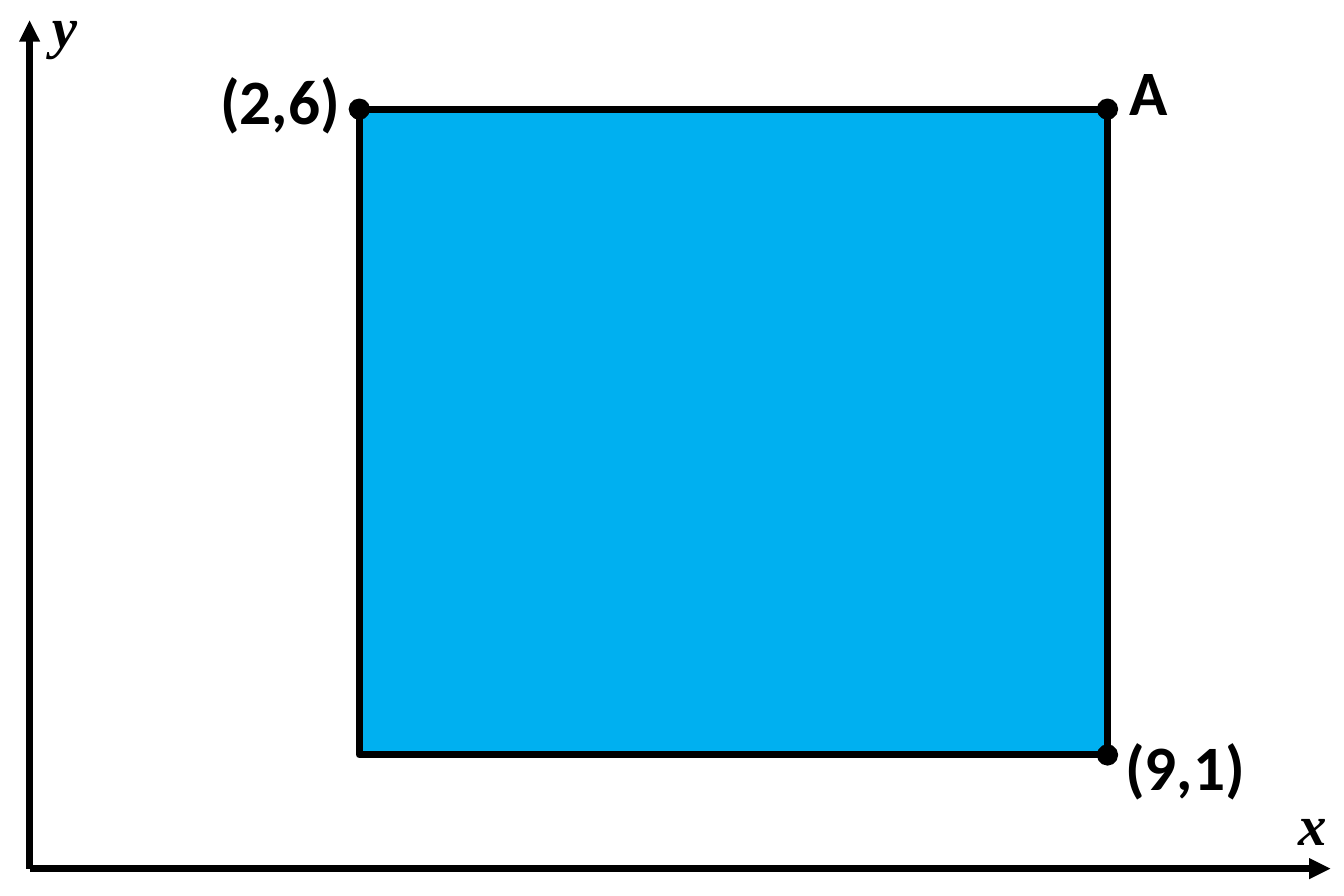
"""Draw a rectangle with labelled corners on a pair of coordinate axes."""
from dataclasses import dataclass

from lxml.etree import SubElement
from pptx import Presentation
from pptx.dml.color import RGBColor
from pptx.enum.shapes import MSO_CONNECTOR as Connector, MSO_SHAPE as Preset
from pptx.enum.text import MSO_AUTO_SIZE as AutoSize
from pptx.oxml.ns import qn
from pptx.slide import Slide
from pptx.util import Pt

EMU_PER_PX = 9144


@dataclass(frozen=True)
class Theme:
    ink: RGBColor = RGBColor(0x00, 0x00, 0x00)
    area: RGBColor = RGBColor(0x00, 0xB0, 0xF0)
    heavy_line: float = 2.25
    thin_line: float = 1
    axis_font: str = "Times New Roman"
    axis_size: int = 18
    point_font: str = "Calibri"
    point_size: int = 20


@dataclass(frozen=True)
class Box:
    left: int
    top: int
    width: int
    height: int

    def emu(self) -> tuple[int, ...]:
        return tuple(px(n) for n in (self.left, self.top, self.width, self.height))


@dataclass(frozen=True)
class Label:
    text: str
    box: Box
    is_axis: bool = False


THEME = Theme()
ORIGIN = (13, 382)
AXIS_ENDS = ((13, 9), (585, 382))
AREA = Box(158, 48, 329, 284)
RIGHT, BOTTOM = AREA.left + AREA.width, AREA.top + AREA.height
CORNERS = ((RIGHT, AREA.top), (AREA.left, AREA.top), (RIGHT, BOTTOM))
DOT_RADIUS = 4
LABELS = (
    Label("y", Box(13, -9, 31, 40), is_axis=True),
    Label("x", Box(561, 342, 33, 40), is_axis=True),
    Label("A", Box(487, 18, 37, 44)),
    Label("(2,6)", Box(87, 22, 73, 44)),
    Label("(9,1)", Box(485, 315, 73, 44)),
)


def px(length: int) -> int:
    """Turn px into EMU."""
    return length * EMU_PER_PX


def add_axis(slide: Slide, end: tuple[int, int]) -> None:
    """Draw an arrow from the origin to the given end."""
    axis = slide.shapes.add_connector(
        Connector.STRAIGHT, *(px(n) for n in (*ORIGIN, *end)))
    axis.line.color.rgb = THEME.ink
    axis.line.width = Pt(THEME.heavy_line)
    SubElement(axis.line._get_or_add_ln(), qn("a:tailEnd"), type="triangle")
    SubElement(axis._element.spPr, qn("a:effectLst"))


def add_figure(slide: Slide, preset: Preset, box: Box, fill: RGBColor,
               line_width: float) -> None:
    """Draw a filled and outlined preset shape."""
    shape = slide.shapes.add_shape(preset, *box.emu())
    shape.shadow.inherit = False
    shape.fill.solid()
    shape.fill.fore_color.rgb = fill
    shape.line.color.rgb = THEME.ink
    shape.line.width = Pt(line_width)


def add_label(slide: Slide, label: Label) -> None:
    """Write an axis name or a point name."""
    text_frame = slide.shapes.add_textbox(*label.box.emu()).text_frame
    text_frame.word_wrap = False
    text_frame.auto_size = AutoSize.SHAPE_TO_FIT_TEXT
    text_frame.text = label.text
    font = text_frame.paragraphs[0].runs[0].font
    font.name = THEME.axis_font if label.is_axis else THEME.point_font
    font.size = Pt(THEME.axis_size if label.is_axis else THEME.point_size)
    font.bold = True
    font.italic = label.is_axis
    font.color.rgb = THEME.ink


def main() -> None:
    """Build and save the slide."""
    presentation = Presentation()
    presentation.slide_width, presentation.slide_height = px(591), px(394)
    slide = presentation.slides.add_slide(presentation.slide_layouts[6])
    for end in AXIS_ENDS:
        add_axis(slide, end)
    add_figure(slide, Preset.RECTANGLE, AREA, THEME.area, THEME.heavy_line)
    for x, y in CORNERS:
        dot = Box(x - DOT_RADIUS, y - DOT_RADIUS, 2 * DOT_RADIUS, 2 * DOT_RADIUS)
        add_figure(slide, Preset.OVAL, dot, THEME.ink, THEME.thin_line)
    for label in LABELS:
        add_label(slide, label)
    presentation.save("out.pptx")


if __name__ == "__main__":
    main()
